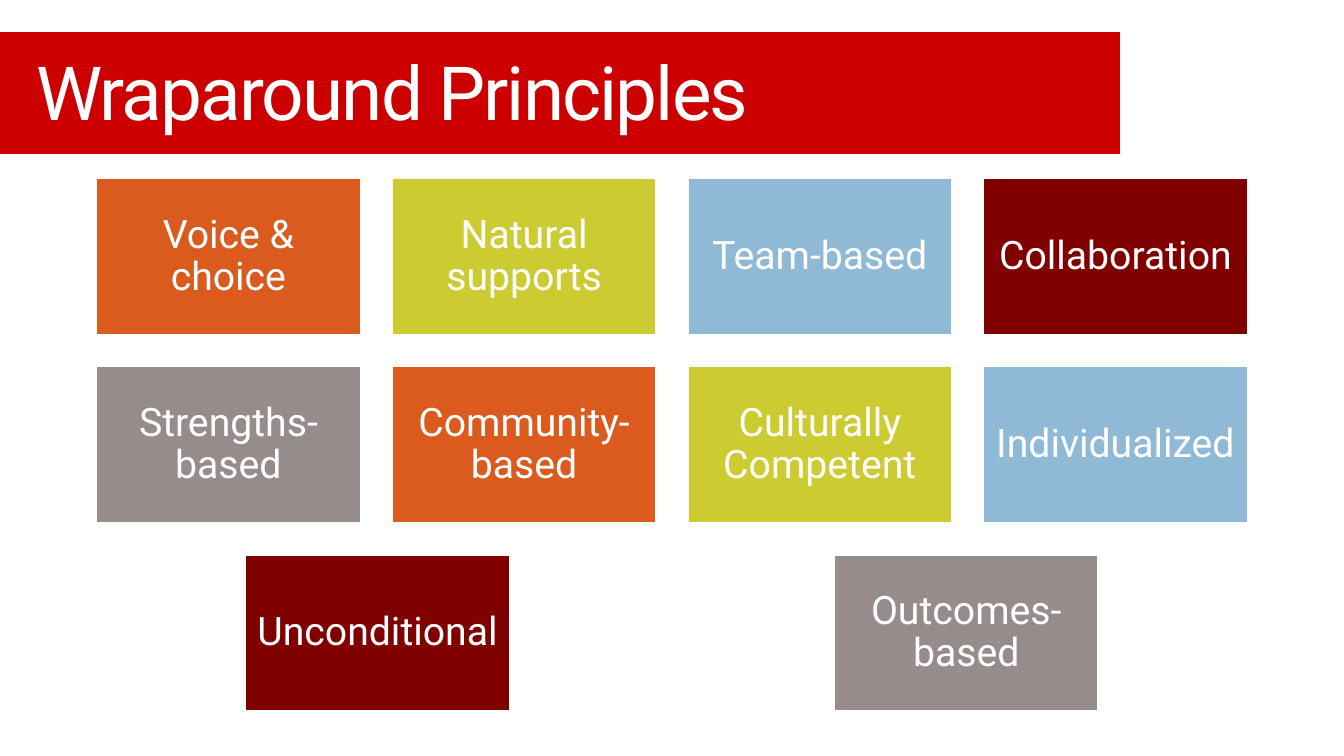
from pptx import Presentation
from pptx.dml.color import RGBColor
from pptx.enum.shapes import MSO_SHAPE
from pptx.enum.text import MSO_ANCHOR, MSO_AUTO_SIZE, PP_ALIGN
from pptx.util import Inches, Pt

# Content: rows of (principle, colour)
TITLE = "Wraparound Principles"
PRINCIPLES = [
    [("Voice & choice", "orange"), ("Natural supports", "lime"),
     ("Team-based", "blue"), ("Collaboration", "maroon")],
    [("Strengths-based", "grey"), ("Community-based", "orange"),
     ("Culturally Competent", "lime"), ("Individualized", "blue")],
    [("Unconditional", "maroon"), ("Outcomes-based", "grey")],
]
COLORS = {"red": "CC0000", "white": "FFFFFF", "orange": "DB5A1E", "lime": "CCCB31",
          "blue": "8FB9D4", "maroon": "800000", "grey": "968C8C"}
FONT = "Roboto"

# Grid in inches: (left of first tile, column pitch) for each row
TILE_W, TILE_H, GAP = 2, 1.2, 0.2
TOP = 1.31
ROW_COLUMNS = [(0.7, TILE_W + GAP), (0.7, TILE_W + GAP), (1.81, 4.38)]


def rgb(name):
    return RGBColor.from_string(COLORS[name])


def add_box(left, top, width, height, fill, line_width):
    box = slide.shapes.add_shape(MSO_SHAPE.RECTANGLE, Inches(left), Inches(top),
                                 Inches(width), Inches(height))
    box.shadow.inherit = False
    box.fill.solid()
    box.fill.fore_color.rgb = rgb(fill)
    box.line.color.rgb = rgb("white")
    box.line.width = Pt(line_width)
    return box


def write(frame, text, size, align):
    frame.text = text
    frame.word_wrap = True
    frame.auto_size = MSO_AUTO_SIZE.NONE
    frame.vertical_anchor = MSO_ANCHOR.MIDDLE
    paragraph = frame.paragraphs[0]
    paragraph.alignment = align
    run = paragraph.runs[0]
    run.font.name = FONT
    run.font.size = Pt(size)
    run.font.color.rgb = rgb("white")
    return paragraph


# Widescreen slide, 16:9
prs = Presentation()
prs.slide_width = Inches(10)
prs.slide_height = prs.slide_width * 9 // 16
slide = prs.slides.add_slide(prs.slide_layouts[5])

# Title over its red banner
title = slide.shapes.title
title.left, title.top = Inches(0.17), Inches(0.27)
title.width, title.height = Inches(8.17), Inches(0.81)
heading = write(title.text_frame, TITLE, 40, PP_ALIGN.LEFT)
heading.runs[0].font._element.set("spc", "-100")
banner = add_box(-0.08, 0.23, 8.42, 0.92, "red", 0.75)
title.element.addprevious(banner.element)

# Tiles
for row, (tiles, (first, pitch)) in enumerate(zip(PRINCIPLES, ROW_COLUMNS)):
    for column, (principle, color) in enumerate(tiles):
        tile = add_box(first + column * pitch, TOP + row * (TILE_H + GAP),
                       TILE_W, TILE_H, color, 3.5)
        frame = tile.text_frame
        frame.margin_left = frame.margin_right = Inches(0.09)
        frame.margin_top = frame.margin_bottom = Inches(0.09)
        label = write(frame, principle, 21, PP_ALIGN.CENTER)
        label.line_spacing = 0.9

prs.save("out.pptx")
